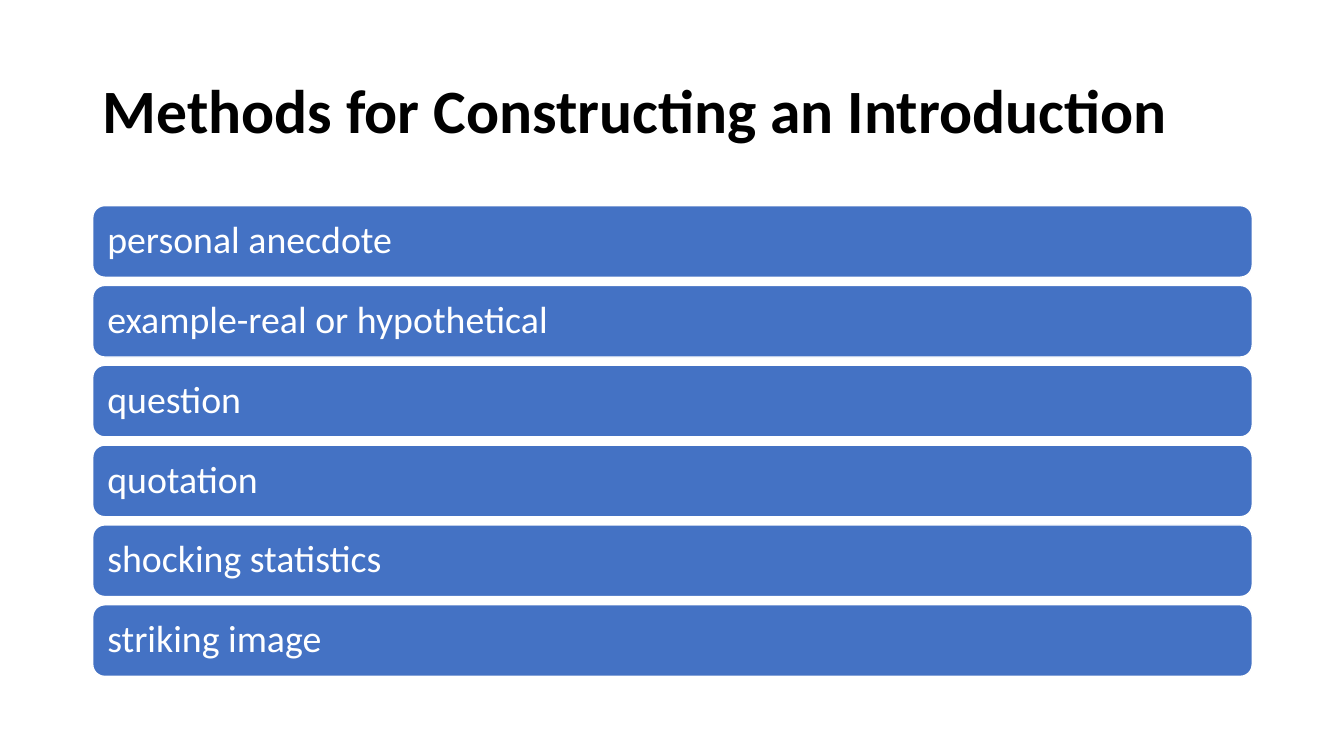
from pptx import Presentation
from pptx import util as u
from pptx.dml.color import RGBColor
from pptx.enum import shapes, text

BLACK = RGBColor(0x00, 0x00, 0x00)
WHITE = RGBColor(0xFF, 0xFF, 0xFF)
BLUE = RGBColor(0x44, 0x72, 0xC4)
FONT = "Calibri"
TITLE = "Methods for Constructing an Introduction"
METHODS = [
    "personal anecdote",
    "example-real or hypothetical",
    "question",
    "quotation",
    "shocking statistics",
    "striking image",
]
BAR_HEIGHT = 0.71


def write_text(shape, content, size, color, bold=False, inset=None):
    """Fill the shape with one left-aligned, vertically centred paragraph."""
    frame = shape.text_frame
    frame.word_wrap = True
    frame.auto_size = text.MSO_AUTO_SIZE.NONE
    frame.vertical_anchor = text.MSO_ANCHOR.MIDDLE
    if inset is not None:
        frame.margin_left = frame.margin_right = u.Inches(inset)
        frame.margin_top = frame.margin_bottom = u.Inches(inset)
    paragraph = frame.paragraphs[0]
    paragraph.alignment = text.PP_ALIGN.LEFT
    paragraph.line_spacing = 0.9
    run = paragraph.add_run()
    run.text = content
    run.font.name = FONT
    run.font.size = u.Pt(size)
    run.font.bold = bold
    run.font.color.rgb = color


def place_title(slide, left, top, width, height):
    title = slide.shapes.title
    title.left, title.top = u.Inches(left), u.Inches(top)
    title.width, title.height = u.Inches(width), u.Inches(height)
    write_text(title, TITLE, size=44, color=BLACK, bold=True)


def add_method_bars(slide, left, top, width, height):
    """Spread one bar per method evenly over the height of the box."""
    pitch = (height - BAR_HEIGHT) / (len(METHODS) - 1)
    for index, method in enumerate(METHODS):
        bar = slide.shapes.add_shape(
            shapes.MSO_SHAPE.ROUNDED_RECTANGLE,
            u.Inches(left), u.Inches(top + index * pitch),
            u.Inches(width), u.Inches(BAR_HEIGHT))
        bar.shadow.inherit = False
        bar.fill.solid()
        bar.fill.fore_color.rgb = BLUE
        bar.line.color.rgb = WHITE
        bar.line.width = u.Pt(1)
        write_text(bar, method, size=27, color=WHITE, inset=0.11)


def main():
    presentation = Presentation()
    presentation.slide_width = u.Inches(13.33)
    presentation.slide_height = u.Inches(7.5)
    slide = presentation.slides.add_slide(presentation.slide_layouts[5])
    place_title(slide, 0.92, 0.4, 11.5, 1.45)
    add_method_bars(slide, 0.92, 2.04, 11.5, 4.67)
    presentation.save("out.pptx")


if __name__ == "__main__":
    main()
